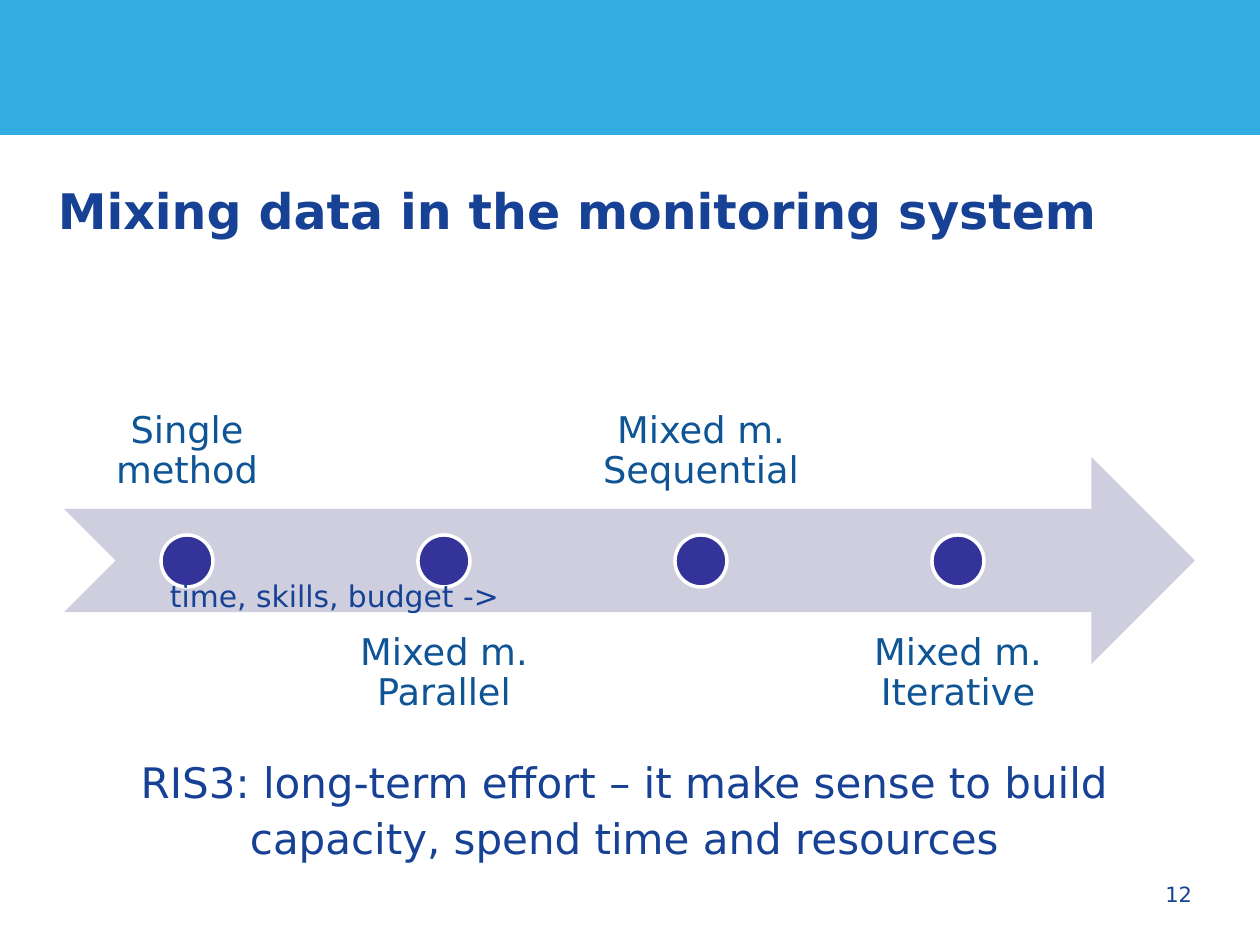
import dataclasses

import pptx
import pptx.dml.color
import pptx.enum.shapes
import pptx.enum.text
import pptx.util

EMU_PER_PX = 914400 / 126
FONT = "DejaVu Sans"
COLORS = {
    "banner": "33ACE3",
    "text": "164194",
    "label": "0F5494",
    "arrow": "CECEDE",
    "dot": "333399",
    "white": "FFFFFF",
}
SHAPE = pptx.enum.shapes.MSO_SHAPE
ALIGN = pptx.enum.text.PP_ALIGN
ANCHOR = pptx.enum.text.MSO_ANCHOR


@dataclasses.dataclass(frozen=True)
class Box:
    left: int
    top: int
    width: int
    height: int

    def emu(self) -> list[int]:
        return [px(value) for value in dataclasses.astuple(self)]


@dataclasses.dataclass(frozen=True)
class Step:
    text: str
    above: bool


STEPS = [
    Step("Single method", True),
    Step("Mixed m. Parallel", False),
    Step("Mixed m. Sequential", True),
    Step("Mixed m. Iterative", False),
]
FIRST_LEFT, STEP_PITCH, STEP_WIDTH, STEP_HEIGHT = 65, 257, 244, 207
ABOVE_TOP, BELOW_TOP = 304, 614
DOT_TOP, DOT_SIZE = 535, 52


def px(value: int) -> int:
    return pptx.util.Emu(round(value * EMU_PER_PX))


def rgb(name: str) -> pptx.dml.color.RGBColor:
    return pptx.dml.color.RGBColor.from_string(COLORS[name])


def write_text(shape, text: str, *, size: int, color: str = "text", bold: bool = False,
               align=ALIGN.LEFT, anchor=ANCHOR.TOP, spacing: float = 1.0,
               insets: tuple[int, int] = (0, 0)) -> None:
    """Fill a shape with one formatted paragraph; insets are horizontal, vertical."""
    frame = shape.text_frame
    frame.word_wrap = True
    frame.auto_size = pptx.enum.text.MSO_AUTO_SIZE.NONE
    frame.vertical_anchor = anchor
    frame.margin_left = frame.margin_right = px(insets[0])
    frame.margin_top = frame.margin_bottom = px(insets[1])
    paragraph = frame.paragraphs[0]
    paragraph.alignment = align
    paragraph.line_spacing = spacing
    run = paragraph.add_run()
    run.text = text
    run.font.name = FONT
    run.font.size = pptx.util.Pt(size)
    run.font.bold = bold
    run.font.color.rgb = rgb(color)


def add_filled(shapes, kind, box: Box, fill: str, outline: str | None = None) -> None:
    shape = shapes.add_shape(kind, *box.emu())
    shape.shadow.inherit = False
    shape.fill.solid()
    shape.fill.fore_color.rgb = rgb(fill)
    if outline is None:
        shape.line.fill.background()
    else:
        shape.line.color.rgb = rgb(outline)
        shape.line.width = pptx.util.Pt(2)


def add_step(shapes, index: int, step: Step) -> None:
    left = FIRST_LEFT + index * STEP_PITCH
    top = ABOVE_TOP if step.above else BELOW_TOP
    label = shapes.add_textbox(*Box(left, top, STEP_WIDTH, STEP_HEIGHT).emu())
    write_text(label, step.text, size=21, color="label", align=ALIGN.CENTER,
               anchor=ANCHOR.BOTTOM if step.above else ANCHOR.TOP,
               spacing=0.9, insets=(20, 20))
    dot_left = left + (STEP_WIDTH - DOT_SIZE) // 2
    add_filled(shapes, SHAPE.OVAL, Box(dot_left, DOT_TOP, DOT_SIZE, DOT_SIZE),
               "dot", "white")


def main() -> None:
    presentation = pptx.Presentation()
    presentation.slide_width = px(1260)
    presentation.slide_height = px(945)
    slide = presentation.slides.add_slide(presentation.slide_layouts[5])
    shapes = slide.shapes

    # Banner, page number and title
    add_filled(shapes, SHAPE.RECTANGLE, Box(0, 0, 1260, 135), "banner")
    number = shapes.add_textbox(*Box(911, 869, 294, 50).emu())
    write_text(number, "12", size=12, align=ALIGN.RIGHT, anchor=ANCHOR.MIDDLE,
               insets=(13, 0))
    title = shapes.title
    title.left, title.top, title.width, title.height = Box(58, 175, 1131, 89).emu()
    write_text(title, "Mixing data in the monitoring system", size=28, bold=True,
               spacing=1.1)

    # Timeline arrow with its steps
    timeline = shapes.add_group_shape().shapes
    add_filled(timeline, SHAPE.NOTCHED_RIGHT_ARROW, Box(64, 457, 1131, 207), "arrow")
    for index, step in enumerate(STEPS):
        add_step(timeline, index, step)

    # Conclusion and the note on the arrow
    conclusion = shapes.add_textbox(*Box(111, 746, 1027, 125).emu())
    write_text(conclusion, "RIS3: long-term effort – it make sense to build capacity, "
               "spend time and resources", size=24, align=ALIGN.CENTER, spacing=1.1,
               insets=(13, 6))
    note = shapes.add_textbox(*Box(154, 609, 375, 10).emu())
    write_text(note, "time, skills, budget ->", size=17, anchor=ANCHOR.BOTTOM,
               spacing=0.9, insets=(16, 16))

    presentation.save("out.pptx")


if __name__ == "__main__":
    main()
